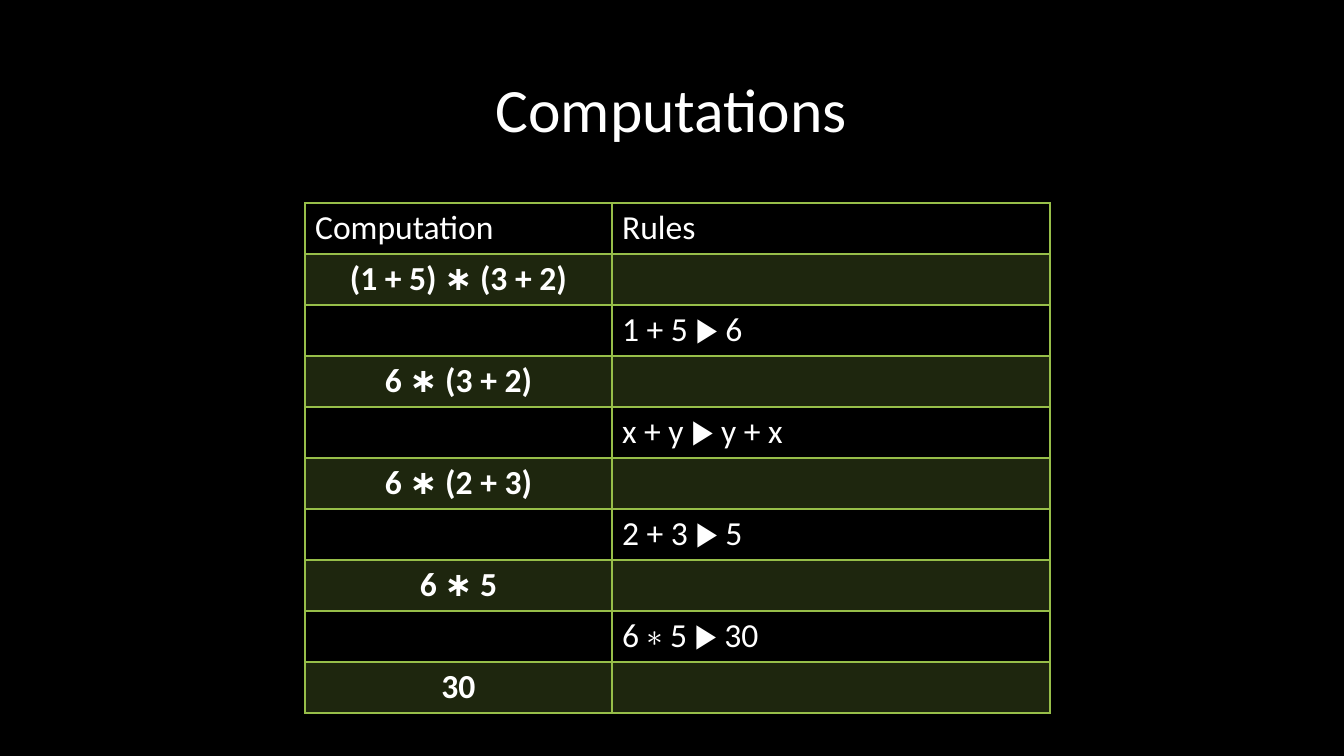
from dataclasses import dataclass

from lxml import etree
from pptx import Presentation
from pptx import util as u
from pptx.dml.color import RGBColor
from pptx.enum import text
from pptx.oxml.ns import qn


@dataclass(frozen=True)
class Theme:
    background: str = "000000"
    ink: str = "FFFFFF"
    accent: str = "97BE49"
    band_alpha: int = 20
    font: str = "Calibri"
    title_size: int = 44
    table_size: int = 24


theme = Theme()


def px(length):
    return u.Emu(round(length * 914400 / 100.8))


def add_border(cell, side, width):
    """Draw one side (L, R, T or B) of a cell, width in points."""
    line = etree.SubElement(cell._tc.get_or_add_tcPr(), qn(f"a:ln{side}"), w=str(u.Pt(width)))
    fill = etree.SubElement(line, qn("a:solidFill"))
    etree.SubElement(fill, qn("a:srgbClr"), val=theme.accent)


presentation = Presentation()
presentation.slide_width, presentation.slide_height = px(1344), px(756)
slide = presentation.slides.add_slide(presentation.slide_layouts[6])
slide.background.fill.solid()
slide.background.fill.fore_color.rgb = RGBColor.from_string(theme.background)

# Title
title = slide.shapes.add_textbox(px(92), px(40), px(1159), px(146))
title.text_frame.word_wrap = True
title.text_frame.vertical_anchor = text.MSO_ANCHOR.MIDDLE
paragraph = title.text_frame.paragraphs[0]
paragraph.text = "Computations"
paragraph.alignment = text.PP_ALIGN.CENTER
paragraph.line_spacing = 0.9
paragraph.font.name = theme.font
paragraph.font.size = u.Pt(theme.title_size)
paragraph.font.color.rgb = RGBColor.from_string(theme.ink)

# Computation steps alternate with the rules that lead to the next step
rows = [
    ("Computation", "Rules"),
    ("(1 + 5) ∗ (3 + 2)", ""),
    ("", "1 + 5 ▶ 6"),
    ("6 ∗ (3 + 2)", ""),
    ("", "x + y ▶ y + x"),
    ("6 ∗ (2 + 3)", ""),
    ("", "2 + 3 ▶ 5"),
    ("6 ∗ 5", ""),
    ("", "6 ∗ 5 ▶ 30"),
    ("30", ""),
]
column_widths = [307, 438]
row_height = 51

table = slide.shapes.add_table(
    len(rows), len(column_widths), px(305), px(203),
    px(sum(column_widths)), px(row_height * len(rows)),
).table
table.first_row = table.horz_banding = False
for column, width in zip(table.columns, column_widths):
    column.width = px(width)

for row_index, row in enumerate(rows):
    table.rows[row_index].height = px(row_height)
    is_step = row_index % 2 == 1
    for column_index, wording in enumerate(row):
        cell = table.cell(row_index, column_index)
        paragraph = cell.text_frame.paragraphs[0]
        paragraph.text = wording
        paragraph.font.name = theme.font
        paragraph.font.size = u.Pt(theme.table_size)
        paragraph.font.bold = is_step
        paragraph.font.color.rgb = RGBColor.from_string(theme.ink)
        if is_step and column_index == 0:
            paragraph.alignment = text.PP_ALIGN.CENTER

        for side in "LRTB":
            under_header = (row_index, side) in [(0, "B"), (1, "T")]
            add_border(cell, side, 2 if under_header else 1)
        if is_step:
            cell.fill.solid()
            cell.fill.fore_color.rgb = RGBColor.from_string(theme.accent)
            color = cell._tc.tcPr.find(f"{qn('a:solidFill')}/{qn('a:srgbClr')}")
            etree.SubElement(color, qn("a:alpha"), val=str(theme.band_alpha * 1000))
        else:
            cell.fill.background()

presentation.save("out.pptx")
